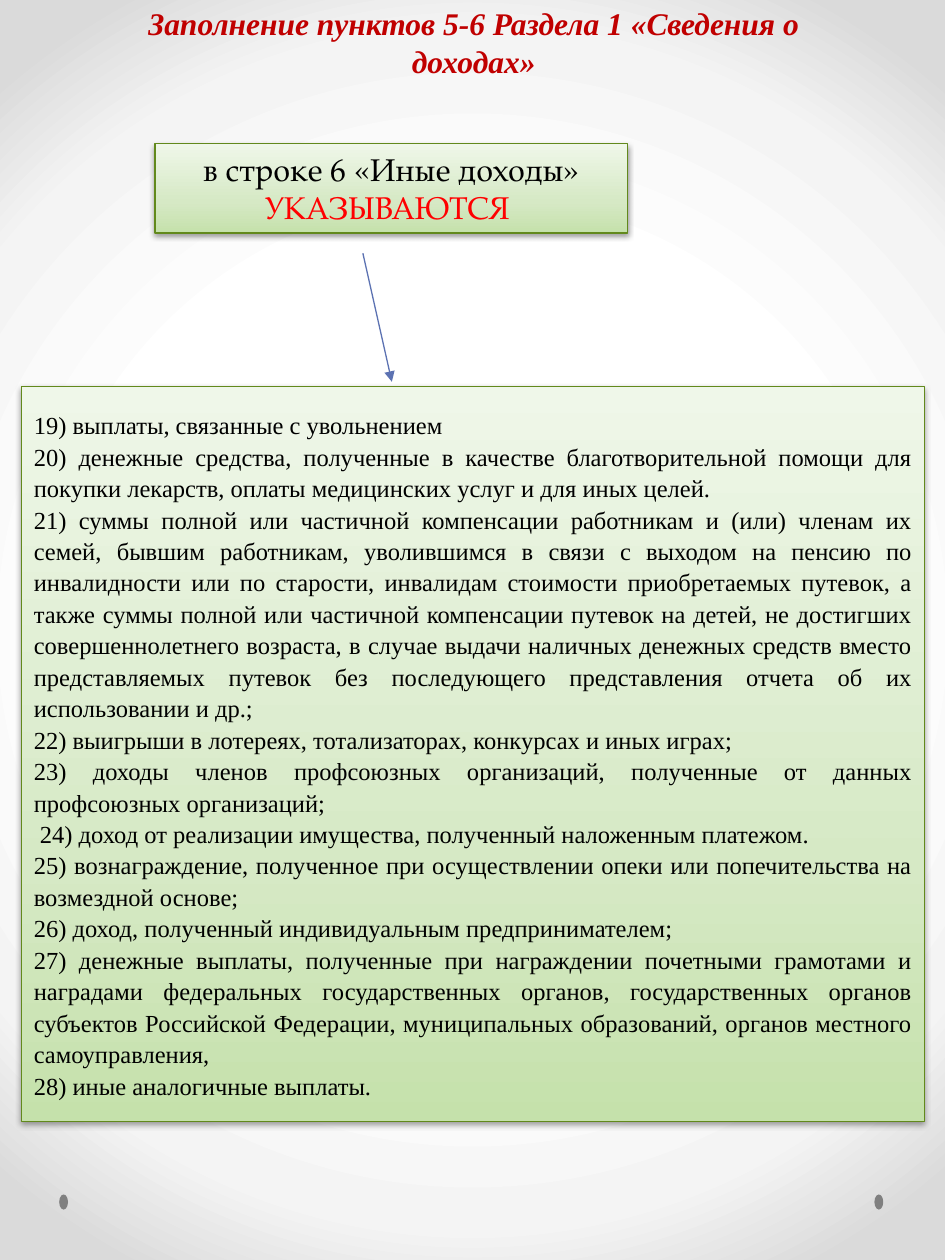
from pptx import Presentation
from pptx.dml.color import RGBColor
from pptx.enum import shapes, text
from pptx.oxml import parse_xml
from pptx.oxml.ns import nsdecls, qn
from pptx.util import Inches, Pt

# Content
TITLE = "Заполнение пунктов 5-6 Раздела 1 «Сведения о доходах»"
LABEL = [("в строке 6 «Иные доходы» ", "000000"), ("УКАЗЫВАЮТСЯ ", "FF0000")]
INCOME_ITEMS = [
    "19) выплаты, связанные с увольнением ",
    "20) денежные средства, полученные в качестве благотворительной помощи для покупки лекарств, "
    "оплаты медицинских услуг и для иных целей. ",
    "21) суммы полной или частичной компенсации работникам и (или) членам их семей, бывшим работникам, "
    "уволившимся в связи с выходом на пенсию по инвалидности или по старости, инвалидам стоимости "
    "приобретаемых путевок, а также суммы полной или частичной компенсации путевок на детей, не достигших "
    "совершеннолетнего возраста, в случае выдачи наличных денежных средств вместо представляемых путевок "
    "без последующего представления отчета об их использовании и др.;",
    "22) выигрыши в лотереях, тотализаторах, конкурсах и иных играх; ",
    "23) доходы членов профсоюзных организаций, полученные от данных профсоюзных организаций;",
    " 24) доход от реализации имущества, полученный наложенным платежом. ",
    "25) вознаграждение, полученное при осуществлении опеки или попечительства на возмездной основе; ",
    "26) доход, полученный индивидуальным предпринимателем; ",
    "27) денежные выплаты, полученные при награждении почетными грамотами и наградами федеральных "
    "государственных органов, государственных органов субъектов Российской Федерации, муниципальных "
    "образований, органов местного самоуправления, ",
    "28) иные аналогичные выплаты. ",
]
BACKDROP_STOPS = [(50, "FFFFFF"), (76, "F4F4F4"), (92, "DADADA")]
GREEN_STOPS = [(0, "C5E1AB"), (35, "D6E9C5"), (100, "EFF7E9")]
RADIAL = '<a:path path="circle"><a:fillToRect l="50000" t="50000" r="50000" b="50000"/></a:path>'
UPWARD = '<a:lin ang="16200000" scaled="0"/>'
SERIF, PALATINO = "Times New Roman", "TeX Gyre Pagella"


def color(value):
    return RGBColor.from_string(value)


def gradient(fill, properties, stops, direction):
    """Swap a solid fill for a gradient with any number of stops."""
    fill.solid()
    marks = "".join(f'<a:gs pos="{pos * 1000}"><a:srgbClr val="{value}"/></a:gs>' for pos, value in stops)
    properties.replace(properties.find(qn("a:solidFill")), parse_xml(
        f'<a:gradFill {nsdecls("a")} rotWithShape="1"><a:gsLst>{marks}</a:gsLst>{direction}</a:gradFill>'))


def add_span(para, words, size, font, value):
    span = para.add_run()
    span.text = words
    span.font.size = Pt(size)
    span.font.name = font
    span.font.color.rgb = color(value)
    return span


def add_shape(kind, *place):
    shape = page.shapes.add_shape(kind, *map(Inches, place))
    shape.shadow.inherit = False
    return shape


def add_green_box(*place):
    box = add_shape(shapes.MSO_SHAPE.RECTANGLE, *place)
    properties = box.element.spPr
    gradient(box.fill, properties, GREEN_STOPS, UPWARD)
    box.line.color.rgb = color("62891C")
    box.line.width = Pt(0.75)
    properties.find(qn("a:effectLst")).append(parse_xml(
        f'<a:outerShdw {nsdecls("a")} blurRad="{Pt(3.1)}" dist="{Pt(1.6)}" dir="5400000" rotWithShape="0">'
        '<a:srgbClr val="000000"><a:alpha val="38000"/></a:srgbClr></a:outerShdw>'))
    box.text_frame.word_wrap = True
    return box


deck = Presentation()
deck.slide_width, deck.slide_height = Inches(7.5), Inches(10)
page = deck.slides.add_slide(deck.slide_layouts[5])

# Backdrop with two dots at the foot
backdrop = page.background.fill
backdrop.solid()
gradient(backdrop, page.element.find(".//" + qn("p:bgPr")), BACKDROP_STOPS, RADIAL)
for left in (0.47, 6.94):
    dot = add_shape(shapes.MSO_SHAPE.OVAL, left, 9.48, 0.07, 0.12)
    dot.fill.solid()
    dot.fill.fore_color.rgb = color("808080")
    dot.line.fill.background()

# Title
title = page.shapes.title
title.left, title.top, title.width, title.height = map(Inches, (0.57, -0.03, 6.38, 0.71))
frame = title.text_frame
frame.word_wrap = True
frame.auto_size = text.MSO_AUTO_SIZE.NONE
frame.vertical_anchor = text.MSO_ANCHOR.BOTTOM
para = frame.paragraphs[0]
para.alignment = text.PP_ALIGN.CENTER
span = add_span(para, TITLE, 18, SERIF, "C00000")
span.font.bold = span.font.italic = True

# Label box
frame = add_green_box(1.23, 1.14, 3.75, 0.71).text_frame
frame.auto_size = text.MSO_AUTO_SIZE.SHAPE_TO_FIT_TEXT
frame.vertical_anchor = text.MSO_ANCHOR.TOP
para = frame.paragraphs[0]
para.alignment = text.PP_ALIGN.CENTER
for words, value in LABEL:
    add_span(para, words, 18, PALATINO, value)

# Arrow from the label to the list
arrow = page.shapes.add_connector(shapes.MSO_CONNECTOR.STRAIGHT, *map(Inches, (2.88, 2.01, 3.11, 3.03)))
arrow.line.color.rgb = color("5C72B2")
arrow.line.width = Pt(0.75)
arrow.line._get_or_add_ln().append(parse_xml(f'<a:tailEnd {nsdecls("a")} type="triangle"/>'))
arrow.element.spPr.append(parse_xml(f'<a:effectLst {nsdecls("a")}/>'))

# List of income kinds
frame = add_green_box(0.17, 3.07, 7.17, 5.83).text_frame
frame.vertical_anchor = text.MSO_ANCHOR.MIDDLE
for index, item in enumerate(INCOME_ITEMS):
    para = frame.add_paragraph() if index else frame.paragraphs[0]
    para.alignment = text.PP_ALIGN.JUSTIFY
    para.line_spacing = 1.07
    add_span(para, item, 14, SERIF, "000000")

deck.save("out.pptx")
